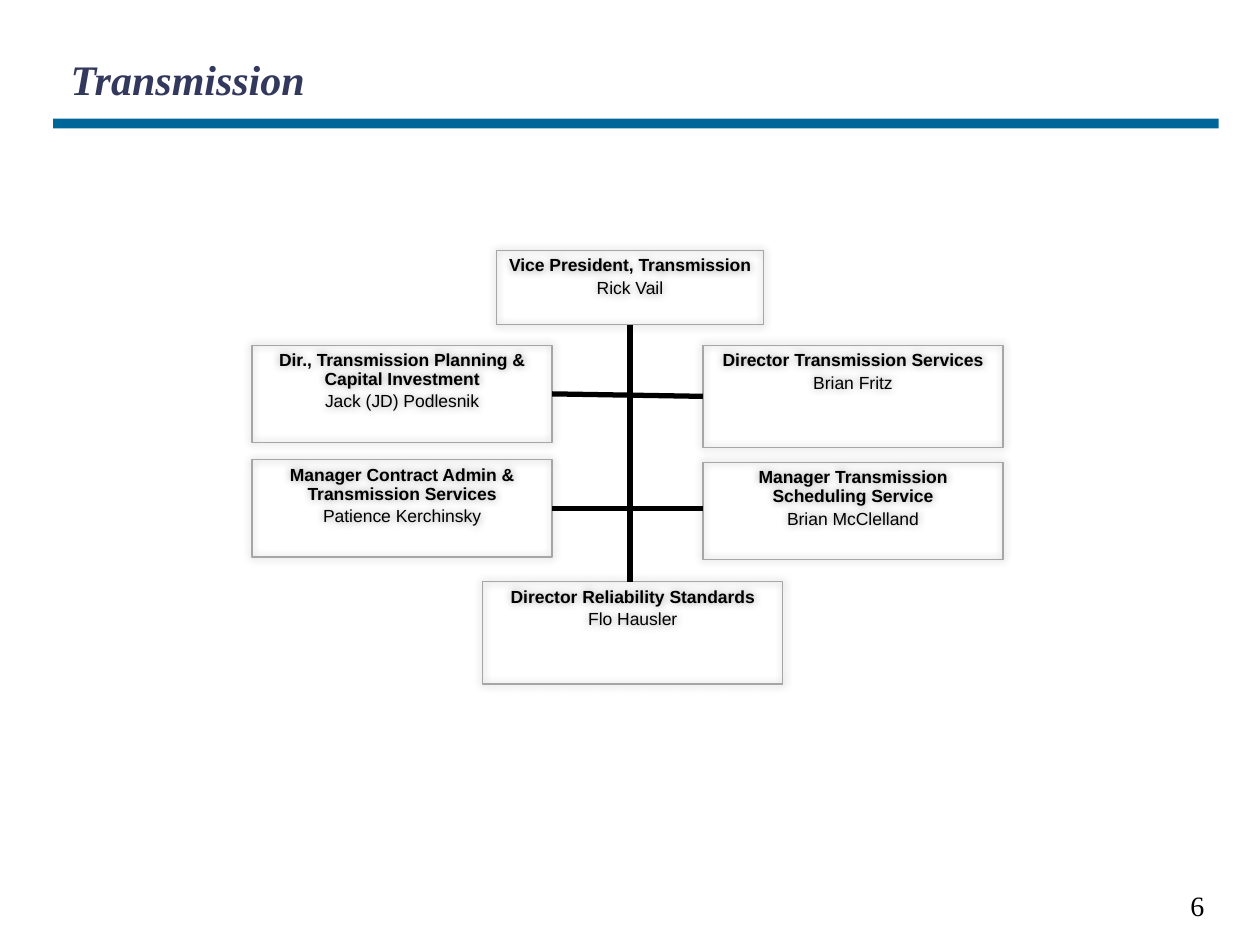
"""Build the Transmission organisation chart slide."""
from dataclasses import dataclass

from lxml.etree import SubElement
from pptx import Presentation
from pptx.dml.color import RGBColor
from pptx.enum.shapes import MSO_CONNECTOR as Connector
from pptx.enum.shapes import MSO_SHAPE as Preset
from pptx.enum.text import MSO_ANCHOR as Anchor
from pptx.enum.text import MSO_AUTO_SIZE as AutoSize
from pptx.enum.text import PP_ALIGN as Align
from pptx.oxml.ns import qn
from pptx.util import Cm, Pt

COLORS = {"rule": "006699", "title": "33385D", "text": "000000",
          "border": "A6A6A6", "shadow": "000000"}
TITLE_FONT = {"name": "Times New Roman", "size": Pt(24), "bold": True, "italic": True}
NUMBER_FONT = {"name": "Times New Roman", "size": Pt(16)}
ROLE_FONT = {"name": "Arial", "size": Pt(10), "bold": True}
PERSON_FONT = {**ROLE_FONT, "bold": False}
BOX_FRAME = {"word_wrap": True, "auto_size": AutoSize.NONE, "vertical_anchor": Anchor.TOP,
             "margin_left": Cm(0.2), "margin_right": Cm(0.2)}
TITLE_FRAME = {"word_wrap": True, "auto_size": AutoSize.NONE, "vertical_anchor": Anchor.MIDDLE}
BOX_PARAGRAPH = {"alignment": Align.CENTER, "line_spacing": 0.9}
BOTTOM, LEFT, RIGHT = 2, 1, 3
CENTER, LEFT_COLUMN, RIGHT_COLUMN = 12.7, 5.08, 14.17


@dataclass
class Position:
    role: str
    person: str
    left: float
    top: float
    height: float
    width: float = 6.05


POSITIONS = {
    "vice_president": Position("Vice President, Transmission", "Rick Vail",
                               10.01, 5.05, 1.5, 5.38),
    "planning": Position("Dir., Transmission Planning & Capital Investment",
                         "Jack (JD) Podlesnik", LEFT_COLUMN, 6.96, 1.96),
    "services": Position("Director Transmission Services", "Brian Fritz",
                         RIGHT_COLUMN, 6.96, 2.06),
    "contracts": Position("Manager Contract Admin & Transmission Services",
                          "Patience Kerchinsky", LEFT_COLUMN, 9.27, 1.96),
    "scheduling": Position("Manager Transmission Scheduling Service",
                           "Brian McClelland", RIGHT_COLUMN, 9.32, 1.96),
    "reliability": Position("Director Reliability Standards", "Flo Hausler",
                            9.73, 11.73, 2.06),
}


def apply_format(target, values: dict) -> None:
    """Set every named attribute on the target."""
    for name, value in values.items():
        setattr(target, name, value)


def write(paragraph, text: str, font: dict, color: str) -> None:
    """Add one formatted run to a paragraph."""
    run = paragraph.add_run()
    run.text = text
    apply_format(run.font, font)
    run.font.color.rgb = RGBColor.from_string(COLORS[color])


def add_soft_shadow(shape) -> None:
    """Give the shape a centred, blurred shadow."""
    shape.shadow.inherit = False
    effects = shape._element.spPr.find(qn("a:effectLst"))
    shadow = SubElement(effects, qn("a:outerShdw"), blurRad=str(Pt(5)), dist="0", dir="0")
    color = SubElement(shadow, qn("a:srgbClr"), val=COLORS["shadow"])
    SubElement(color, qn("a:alpha"), val="40000")


def add_position(slide, position: Position):
    """Draw one box with a role and a person."""
    shape = slide.shapes.add_shape(Preset.RECTANGLE, Cm(position.left), Cm(position.top),
                                   Cm(position.width), Cm(position.height))
    shape.fill.background()
    shape.line.color.rgb = RGBColor.from_string(COLORS["border"])
    shape.line.width = Pt(0.75)
    add_soft_shadow(shape)
    frame = shape.text_frame
    apply_format(frame, BOX_FRAME)
    role, person = frame.paragraphs[0], frame.add_paragraph()
    for paragraph in (role, person):
        apply_format(paragraph, BOX_PARAGRAPH)
    person.space_before = Pt(2)
    write(role, position.role, ROLE_FONT, "text")
    write(person, position.person, PERSON_FONT, "text")
    return shape


def add_line(slide, start: tuple[float, float], end: tuple[float, float]):
    """Draw one thick line without a shadow."""
    line = slide.shapes.add_connector(Connector.STRAIGHT, *map(Cm, start + end))
    line.line.color.rgb = RGBColor.from_string(COLORS["text"])
    line.line.width = Pt(3)
    SubElement(line._element.spPr, qn("a:effectLst"))
    return line


def add_heading(slide) -> None:
    """Fill the title and draw the rule below it."""
    rule = slide.shapes.add_shape(Preset.RECTANGLE, Cm(1.07), Cm(2.39), Cm(23.5), Cm(0.2))
    rule.fill.solid()
    rule.fill.fore_color.rgb = RGBColor.from_string(COLORS["rule"])
    rule.line.fill.background()
    rule.shadow.inherit = False
    title = slide.shapes.title
    apply_format(title, {"left": Cm(1.17), "top": Cm(0.64),
                         "width": Cm(23.39), "height": Cm(1.9)})
    apply_format(title.text_frame, TITLE_FRAME)
    paragraph = title.text_frame.paragraphs[0]
    paragraph.alignment = Align.LEFT
    write(paragraph, "Transmission", TITLE_FONT, "title")


def add_page_number(slide) -> None:
    """Write the page number at the lower right."""
    box = slide.shapes.add_textbox(Cm(21.79), Cm(17.78), Cm(2.74), Cm(0.94))
    box.text_frame.word_wrap = True
    paragraph = box.text_frame.paragraphs[0]
    paragraph.alignment = Align.RIGHT
    write(paragraph, "6", NUMBER_FONT, "text")


def main() -> None:
    """Build and save the presentation."""
    presentation = Presentation()
    presentation.slide_width, presentation.slide_height = Cm(25.4), Cm(19.05)
    slide = presentation.slides.add_slide(presentation.slide_layouts[5])
    add_heading(slide)
    add_page_number(slide)
    boxes = {name: add_position(slide, position) for name, position in POSITIONS.items()}

    left_edge = LEFT_COLUMN + POSITIONS["planning"].width
    trunk = add_line(slide, (CENTER, 6.55), (CENTER, POSITIONS["reliability"].top))
    trunk.begin_connect(boxes["vice_president"], BOTTOM)
    directors = add_line(slide, (RIGHT_COLUMN, 7.99), (left_edge, 7.94))
    directors.begin_connect(boxes["services"], LEFT)
    directors.end_connect(boxes["planning"], RIGHT)
    managers = add_line(slide, (RIGHT_COLUMN, 10.25), (left_edge, 10.25))
    managers.end_connect(boxes["contracts"], RIGHT)

    presentation.save("out.pptx")


if __name__ == "__main__":
    main()
